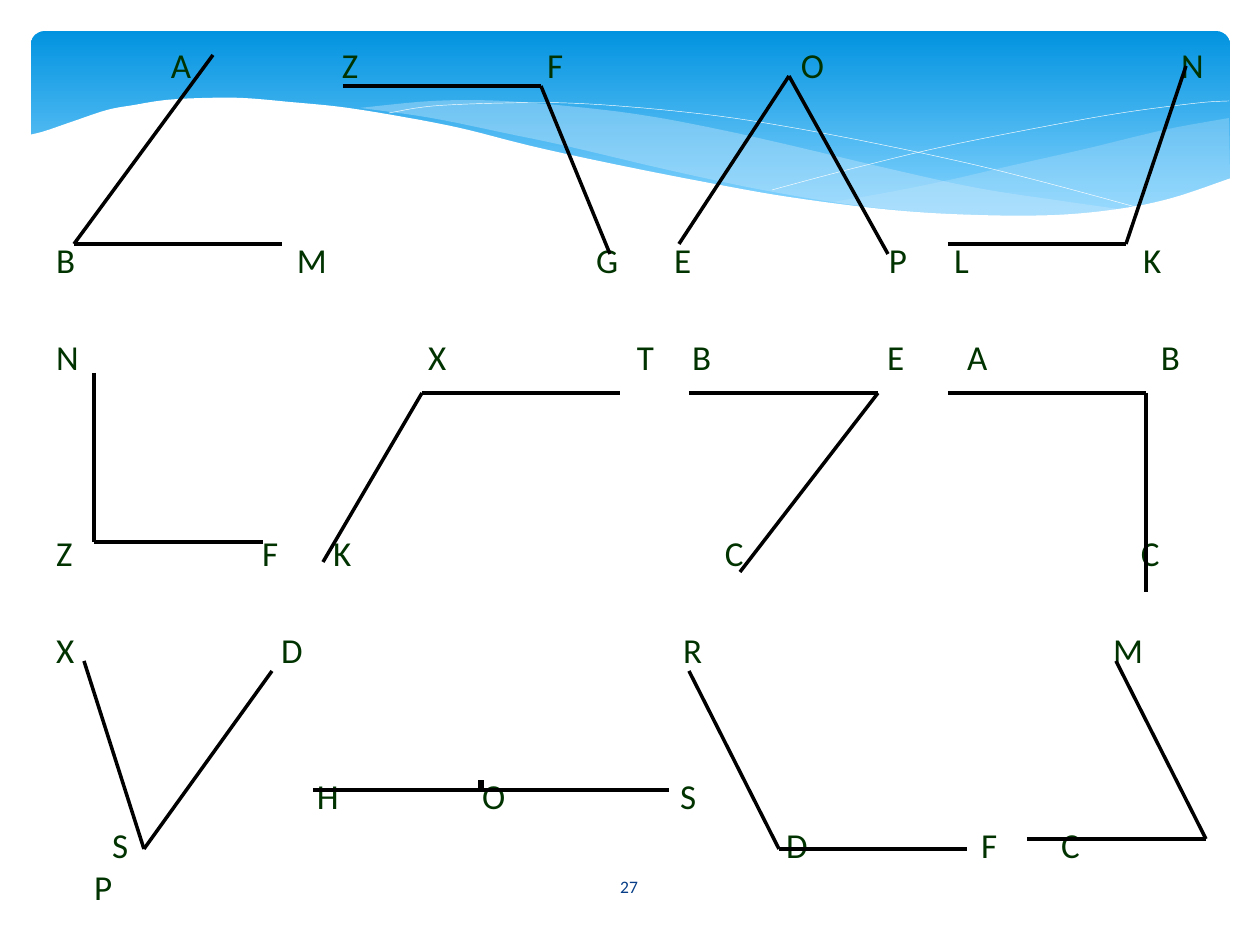
from typing import NamedTuple

from lxml import etree
from pptx import Presentation
from pptx.dml.color import RGBColor
from pptx.enum.shapes import MSO_CONNECTOR, MSO_SHAPE
from pptx.enum.text import MSO_ANCHOR, PP_ALIGN
from pptx.oxml.ns import qn
from pptx.util import Emu, Pt

STRAIGHT = MSO_CONNECTOR.STRAIGHT
ROUND = MSO_SHAPE.ROUNDED_RECTANGLE
MIDDLE = MSO_ANCHOR.MIDDLE
CENTER = PP_ALIGN.CENTER

BLACK = RGBColor(0x00, 0x00, 0x00)
WHITE = RGBColor(0xFF, 0xFF, 0xFF)
GREEN = RGBColor(0x00, 0x33, 0x00)
NAVY = RGBColor(0x07, 0x3E, 0x87)
SKY = RGBColor(0x02, 0x93, 0xE0)
PALE = RGBColor(0x83, 0xD3, 0xFE)
MIST = RGBColor(0xC6, 0xE7, 0xFC)

FONT = "Calibri"
LEFT = 56  # px where the label text starts
PITCH = 28  # points from one text line to the next
LINE = 24.4  # points of height of one text line
STEPS = 6  # samples between two knots of a curve

Point = tuple[float, float]


class Angle(NamedTuple):
    start: Point
    vertex: Point
    end: Point


class Label(NamedTuple):
    text: str
    x: int


class Row(NamedTuple):
    gap: float  # points above the row
    labels: list[Label]


class Wave(NamedTuple):
    edges: list[list[Point]]
    color: RGBColor
    alpha: int


def px(n: float) -> Emu:
    return Emu(round(n * 914400 / 126))


def row(lines: int, *labels: tuple[str, int]) -> Row:
    return Row(max(lines * PITCH - LINE, 0), [Label(*item) for item in labels])


def smooth(knots: list[Point]) -> list[Point]:
    """Catmull-Rom curve through the knots."""
    ends = [knots[0], *knots, knots[-1]]
    curve = []
    for a, b, c, d in zip(ends, ends[1:], ends[2:], ends[3:]):
        for i in range(STEPS):
            t = i / STEPS
            curve.append(tuple(
                q + t * (r - p) / 2 + t**2 * (2 * p - 5 * q + 4 * r - s) / 2
                + t**3 * (3 * q - p - 3 * r + s) / 2
                for p, q, r, s in zip(a, b, c, d)))
    return curve + [knots[-1]]


def outline(slide, points: list[Point], close: bool):
    first, *rest = [(px(x), px(y)) for x, y in points]
    pen = slide.shapes.build_freeform(*first)
    pen.add_line_segments(rest, close=close)
    shape = pen.convert_to_shape()
    shape.shadow.inherit = False
    return shape


def draw_wave(slide, wave: Wave) -> None:
    points = [p for edge in wave.edges for p in smooth(edge)]
    shape = outline(slide, points, True)
    shape.line.fill.background()
    shape.fill.solid()
    shape.fill.fore_color.rgb = wave.color
    if wave.alpha < 100:
        tint = shape.fill._xPr.find(".//" + qn("a:srgbClr"))
        etree.SubElement(tint, qn("a:alpha"), val=str(wave.alpha * 1000))


def draw_streak(slide, knots: list[Point]) -> None:
    shape = outline(slide, smooth(knots), False)
    shape.fill.background()
    shape.line.color.rgb = WHITE
    shape.line.width = Pt(0.25)


def draw_line(slide, start: Point, end: Point, width: int = 2) -> None:
    line = slide.shapes.add_connector(STRAIGHT, *map(px, start + end))
    line.line.color.rgb = BLACK
    line.line.width = Pt(width)
    etree.SubElement(line._element.spPr, qn("a:effectLst"))


def style(para, size: int, color: RGBColor) -> None:
    para.font.name = FONT
    para.font.size = Pt(size)
    para.font.color.rgb = color


def draw_rows(slide, rows: list[Row]) -> None:
    box = slide.shapes.add_textbox(px(44), px(37), px(1216), px(908))
    frame = box.text_frame
    frame.word_wrap = True
    frame.margin_left = px(LEFT - 44)
    for i, item in enumerate(rows):
        para = frame.paragraphs[0] if i == 0 else frame.add_paragraph()
        para.space_before = Pt(item.gap)
        tabs = etree.SubElement(para._p.get_or_add_pPr(), qn("a:tabLst"))
        for label in item.labels:
            if label.x > LEFT:
                etree.SubElement(tabs, qn("a:tab"), pos=str(px(label.x - LEFT)), algn="l")
        text = "\t".join(label.text for label in item.labels)
        para.add_run().text = text if item.labels[0].x == LEFT else "\t" + text
        style(para, 20, GREEN)


WAVES = [
    Wave([[(1229, 118), (1178, 127), (1142, 135), (1085, 149), (1014, 165), (949, 180),
           (890, 192), (833, 202)],
          [(833, 202), (871, 207), (922, 212), (969, 215), (1012, 217), (1052, 217),
           (1099, 213), (1140, 205), (1178, 197), (1230, 178)]], MIST, 29),
    Wave([[(1125, 210), (1055, 200), (977, 188), (890, 169), (793, 146), (717, 129),
           (648, 116), (586, 108), (503, 101), (433, 101), (360, 108)],
          [(360, 108), (431, 118), (509, 134), (566, 146), (668, 170), (757, 189),
           (838, 203), (910, 212), (974, 217), (1043, 218), (1125, 210)]], MIST, 40),
]
STREAKS = [
    [(389, 113), (433, 106), (505, 103), (567, 103), (643, 108), (733, 118), (838, 136),
     (958, 161), (1047, 183), (1143, 209)],
    [(772, 190), (847, 170), (942, 147), (1053, 125), (1128, 112), (1198, 103), (1229, 101)],
]
COVER = Wave([
    [(1231, 178), (1172, 198), (1118, 209), (1055, 215), (978, 215), (892, 210), (789, 197),
     (699, 181), (599, 161), (527, 145), (460, 128), (398, 116), (341, 107), (290, 102),
     (243, 98), (203, 98), (166, 100), (134, 105), (107, 110), (74, 121), (45, 131), (29, 135)],
    [(29, 282), (1231, 282)]], WHITE, 100)

ROWS = [
    row(0, ("А", 171), ("Z", 342), ("F", 547), ("O", 801), ("N", 1181)),
    row(4, ("B", 56), ("M", 297), ("G", 596), ("E", 674), ("P", 889), ("L", 954), ("K", 1143)),
    row(2, ("N", 56), ("X", 428), ("T", 637), ("B", 692), ("E", 887), ("A", 967), ("B", 1161)),
    row(4, ("Z", 56), ("F", 262), ("K", 333), ("C", 725), ("C", 1141)),
    row(2, ("X", 56), ("D", 281), ("R", 683), ("M", 1113)),
    row(3, ("H", 317), ("O", 482), ("S", 680)),
    row(1, ("S", 112), ("D", 786), ("F", 981), ("C", 1061)),
    row(0, ("P", 94)),
]
ANGLES = [
    Angle((213, 55), (74, 244), (282, 244)),
    Angle((343, 86), (541, 86), (610, 254)),
    Angle((679, 244), (789, 76), (888, 254)),
    Angle((948, 244), (1126, 244), (1186, 66)),
    Angle((94, 373), (94, 542), (263, 542)),
    Angle((323, 562), (422, 393), (620, 393)),
    Angle((689, 393), (878, 393), (740, 572)),
    Angle((948, 393), (1146, 393), (1146, 592)),
    Angle((84, 661), (144, 849), (272, 671)),
    Angle((689, 671), (779, 849), (967, 849)),
    Angle((1027, 839), (1206, 839), (1116, 661)),
]


def main() -> None:
    deck = Presentation()
    deck.slide_width, deck.slide_height = px(1260), px(945)
    slide = deck.slides.add_slide(deck.slide_layouts[6])

    # Blue banner with waves
    band = slide.shapes.add_shape(ROUND, px(31), px(31), px(1199), px(197))
    band.adjustments[0] = 0.07
    band.shadow.inherit = False
    band.line.fill.background()
    band.fill.gradient()
    band.fill.gradient_angle = 270
    for stop, color, place in zip(band.fill.gradient_stops, (SKY, PALE), (0, 0.9)):
        stop.color.rgb = color
        stop.position = place
    for wave in WAVES:
        draw_wave(slide, wave)
    for knots in STREAKS:
        draw_streak(slide, knots)
    draw_wave(slide, COVER)

    # Letters and angles
    draw_rows(slide, ROWS)
    for angle in ANGLES:
        draw_line(slide, angle.start, angle.vertex)
        draw_line(slide, angle.vertex, angle.end)

    # Straight angle with its vertex tick
    draw_line(slide, (313, 790), (669, 790))
    draw_line(slide, (481, 790), (481, 780), 3)

    # Page number
    box = slide.shapes.add_textbox(px(549), px(862), px(160), px(50))
    box.text_frame.word_wrap = True
    box.text_frame.vertical_anchor = MIDDLE
    para = box.text_frame.paragraphs[0]
    para.text = "27"
    para.alignment = CENTER
    style(para, 10, NAVY)

    deck.save("out.pptx")


if __name__ == "__main__":
    main()
